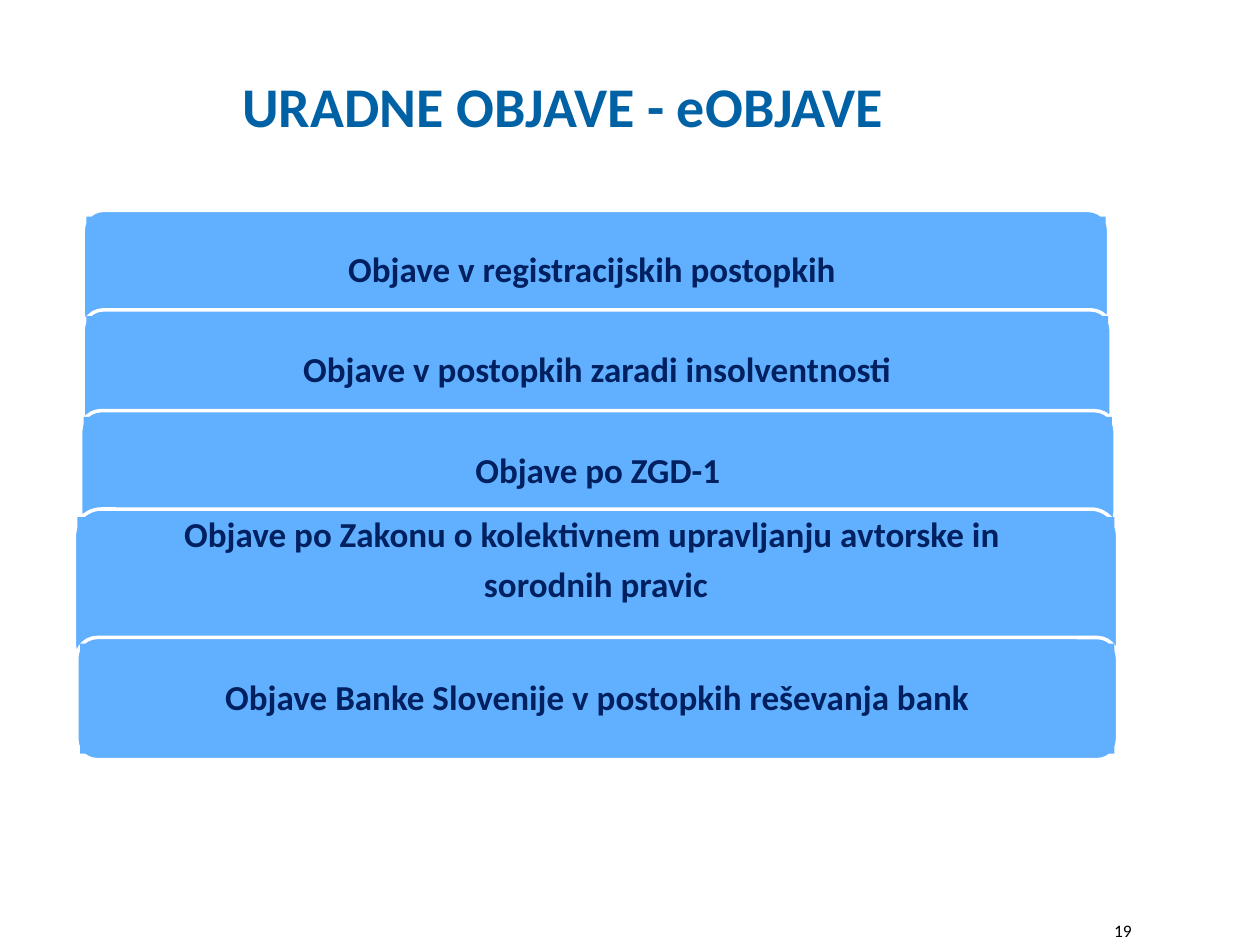
from pptx import Presentation
from pptx.dml.color import RGBColor
from pptx.enum.shapes import MSO_SHAPE as SHAPE
from pptx.enum.text import MSO_ANCHOR as ANCHOR, PP_ALIGN as ALIGN
from pptx.util import Inches, Pt

WHITE = RGBColor(0xFF, 0xFF, 0xFF)
BLACK = RGBColor(0, 0, 0)
BLUE = RGBColor(0x00, 0x61, 0xA5)
SKY = RGBColor(0x61, 0xB0, 0xFF)
NAVY = RGBColor(0x00, 0x20, 0x60)

TITLE_FONT = {"name": "Calibri", "size": Pt(32), "bold": True}
BAND_FONT = {"name": "Calibri", "size": Pt(20), "bold": True}
NUMBER_FONT = {"name": "Calibri", "size": Pt(10), "bold": False}

BANDS = [
    ((0.66, 1.67, 8.14, 0.97), ["Objave v registracijskih postopkih "]),
    ((0.66, 2.46, 8.16, 0.97), ["Objave v postopkih zaradi insolventnosti"]),
    ((0.64, 3.26, 8.21, 0.97), ["Objave po ZGD-1"]),
    ((0.59, 4.04, 8.28, 1.28),
     ["Objave po Zakonu o kolektivnem upravljanju avtorske in ", "sorodnih pravic"]),
    ((0.61, 5.06, 8.26, 0.97), ["Objave Banke Slovenije v postopkih reševanja bank"]),
]


def write_paragraph(p, text, font, color, align):
    """Write one formatted run into a paragraph."""
    p.alignment = align
    r = p.add_run()
    r.text = text
    for key, value in font.items():
        setattr(r.font, key, value)
    r.font.color.rgb = color


def add_label(s, box, text, font, color, align):
    """Add a one-paragraph text box."""
    tf = s.shapes.add_textbox(*map(Inches, box)).text_frame
    tf.word_wrap = True
    write_paragraph(tf.paragraphs[0], text, font, color, align)


def add_panel(group, kind, box):
    """Add a flat sky-blue shape without a line to a group."""
    sp = group.shapes.add_shape(kind, *map(Inches, box))
    sp.shadow.inherit = False
    sp.fill.solid()
    sp.fill.fore_color.rgb = SKY
    sp.line.fill.background()
    return sp


def add_band(s, box, lines):
    """Add a rounded band with its text panel inside the box."""
    left, top, width, height = box
    group = s.shapes.add_group_shape()
    frame = add_panel(group, SHAPE.ROUNDED_RECTANGLE, box)
    frame.line.color.rgb = WHITE
    frame.line.width = Pt(2)
    dx, dy = 0.025, 0.05 * height
    sp = add_panel(group, SHAPE.RECTANGLE,
                   (left + dx, top + dy, width - 2 * dx, height - 2 * dy))
    tf = sp.text_frame
    settings = {
        "word_wrap": True,
        "vertical_anchor": ANCHOR.TOP if len(lines) > 1 else ANCHOR.MIDDLE,
        "margin_left": Inches(0.31),
        "margin_right": Inches(0.31),
        "margin_top": 0,
        "margin_bottom": 0,
    }
    for key, value in settings.items():
        setattr(tf, key, value)
    for i, line in enumerate(lines):
        p = tf.add_paragraph() if i else tf.paragraphs[0]
        p.line_spacing = 0.9
        p.space_after = Pt(7)
        write_paragraph(p, line, BAND_FONT, NAVY, ALIGN.CENTER)


def main():
    """Build and save the slide."""
    prs = Presentation()
    prs.slide_width, prs.slide_height = Inches(10), Inches(7.5)
    s = prs.slides.add_slide(prs.slide_layouts[6])
    add_label(s, (0.22, 0.52, 8.5, 0.9), "URADNE OBJAVE - eOBJAVE",
              TITLE_FONT, BLUE, ALIGN.CENTER)
    for box, lines in BANDS:
        add_band(s, box, lines)
    add_label(s, (7.58, 7.25, 1.5, 0.25), "19", NUMBER_FONT, BLACK, ALIGN.RIGHT)
    prs.save("out.pptx")


if __name__ == "__main__":
    main()
